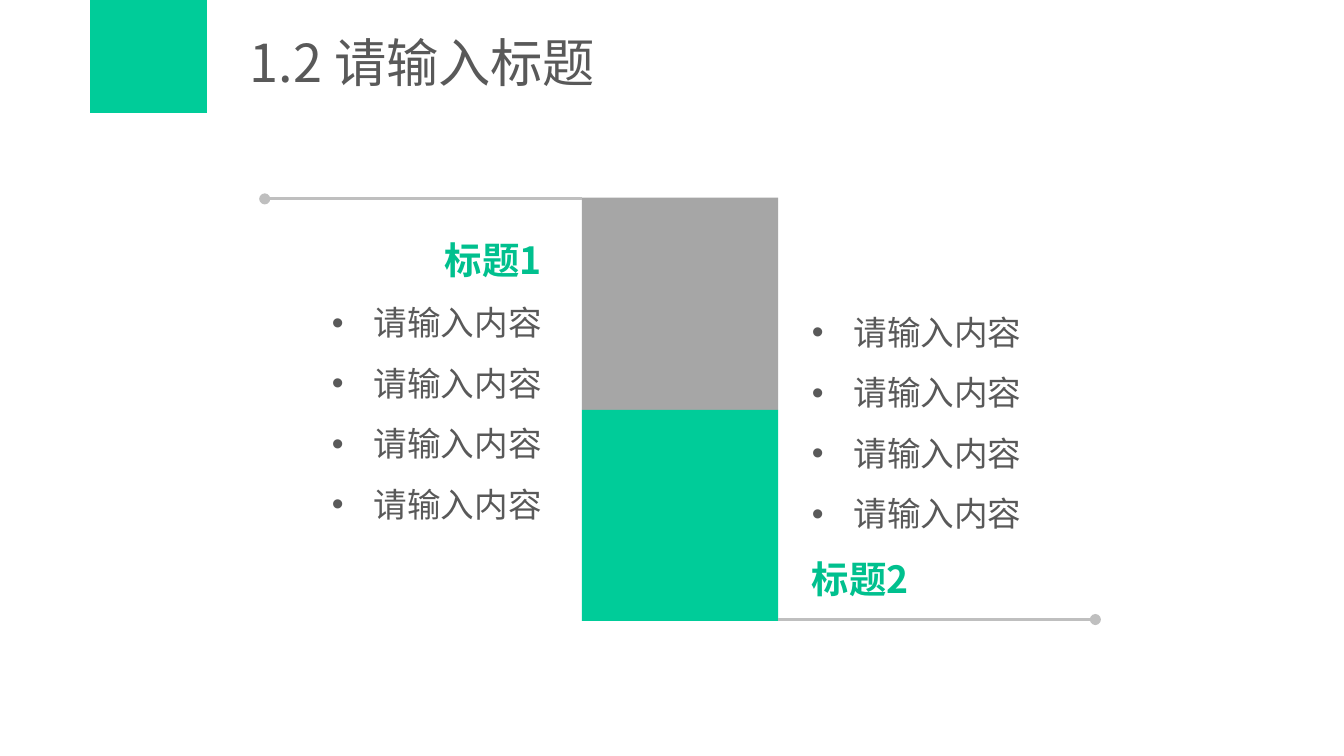
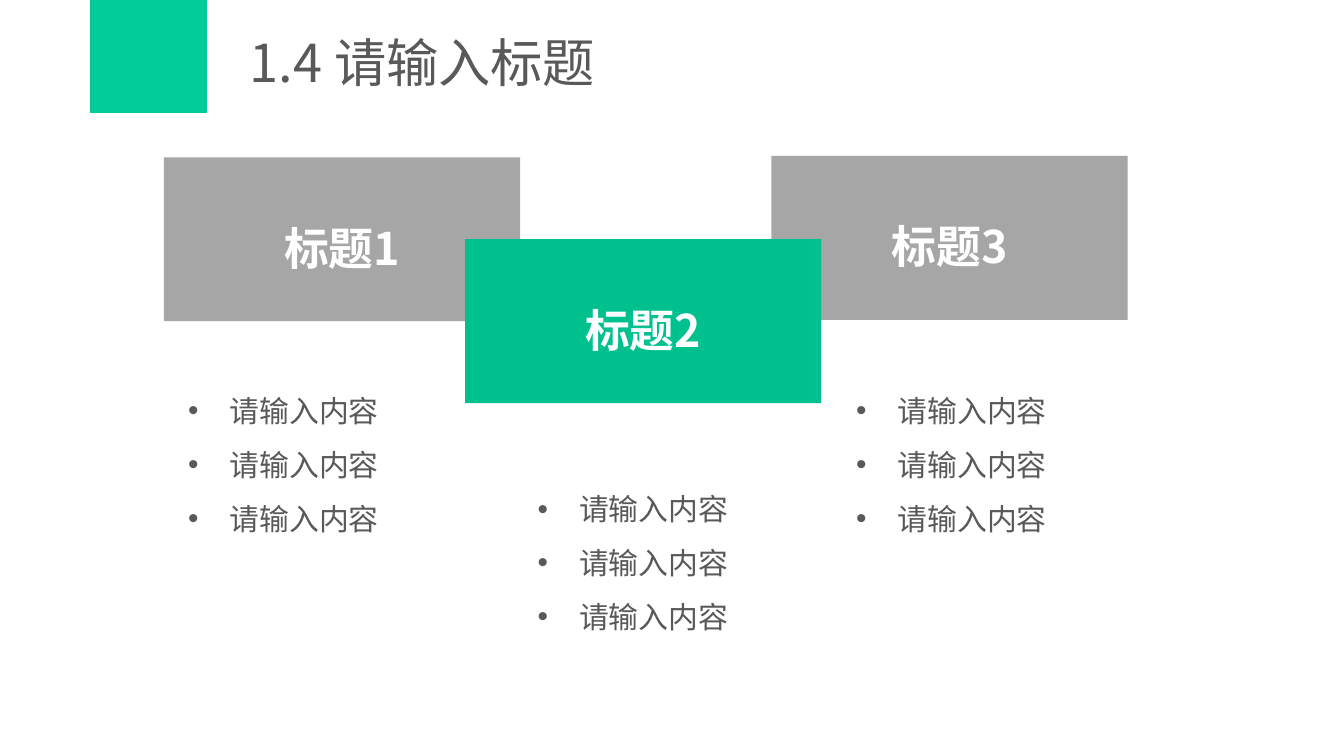
from lxml.etree import SubElement as Sub
from pptx import Presentation
from pptx.dml.color import RGBColor
from pptx.enum.shapes import MSO_CONNECTOR as Link, MSO_SHAPE as Shape
from pptx.enum.text import MSO_ANCHOR as Anchor, MSO_AUTO_SIZE as Fit, PP_ALIGN as Align
from pptx.oxml.ns import qn
from pptx.util import Inches, Pt

GREEN = RGBColor(0x00, 0xCC, 0x99)
DEEP = RGBColor(0x00, 0xC0, 0x8E)
GRAY = RGBColor(0xA6, 0xA6, 0xA6)
PALE = RGBColor(0xBF, 0xBF, 0xBF)
DARK = RGBColor(0x59, 0x59, 0x59)
WHITE = RGBColor(0xFF, 0xFF, 0xFF)
FONT = "Noto Sans CJK SC"
ITEM = "请输入内容"
TWO, FOUR = 3, 4  # layouts with two and four body placeholders


def write(par, text, size=18, color=DARK, bold=False, align=Align.LEFT,
          space=1.0, bullet=False):
    """Fill one paragraph with text in the given format."""
    par.alignment = align
    par.line_spacing = space
    par.space_before = par.space_after = Pt(0)
    run = par.add_run()
    run.text = text
    font = run.font
    font.name, font.size, font.bold = FONT, Pt(size), bold
    font.color.rgb = color
    Sub(font._element, qn("a:ea"), typeface=FONT)
    props = par._p.get_or_add_pPr()
    indent = Inches(0.31) if bullet else 0
    props.set("marL", str(indent))
    props.set("indent", str(-indent))
    if bullet:
        Sub(props, qn("a:buFont"), typeface="Arial")
        Sub(props, qn("a:buChar"), char="•")
    else:
        Sub(props, qn("a:buNone"))


def place(shape, x, y, w, h):
    shape.left, shape.top = Inches(x), Inches(y)
    shape.width, shape.height = Inches(w), Inches(h)


class Deck:
    def __init__(self):
        self.file = Presentation()
        self.file.slide_width = Inches(10)
        self.file.slide_height = Inches(10) * 9 // 16

    def start(self, title, layout):
        """Add a slide with the corner block and its title."""
        self.slide = self.file.slides.add_slide(self.file.slide_layouts[layout])
        self.free = [s for s in self.slide.placeholders
                     if s.placeholder_format.idx > 0]
        self.block(0.67, 0, 0.87, 0.84, GREEN)
        head = self.slide.shapes.title
        place(head, 1.76, 0.14, 7.89, 0.63)
        head.text_frame.vertical_anchor = Anchor.MIDDLE
        write(head.text_frame.paragraphs[0], title, size=28)

    def block(self, x, y, w, h, color, text=None):
        box = self.slide.shapes.add_shape(
            Shape.RECTANGLE, Inches(x), Inches(y), Inches(w), Inches(h))
        box.shadow.inherit = False
        box.fill.solid()
        box.fill.fore_color.rgb = color
        box.line.fill.background()
        if text:
            box.text_frame.vertical_anchor = Anchor.MIDDLE
            write(box.text_frame.paragraphs[0], text, size=24, color=WHITE,
                  bold=True, align=Align.CENTER, space=1.3)

    def line(self, x, y, end):
        """Draw a level line from x to end, closed by a dot."""
        rule = self.slide.shapes.add_connector(
            Link.STRAIGHT, Inches(x), Inches(y), Inches(end), Inches(y))
        rule.line.color.rgb = PALE
        rule.line.width = Pt(1.5)
        Sub(rule.line._get_or_add_ln(), qn("a:tailEnd"), type="oval")
        Sub(rule._element.spPr, qn("a:effectLst"))

    def items(self, x, y, w, h, rows, align=Align.LEFT):
        """Fill the next body placeholder with (text, format) rows."""
        body = self.free.pop(0)
        place(body, x, y, w, h)
        frame = body.text_frame
        frame.word_wrap = True
        frame.auto_size = Fit.SHAPE_TO_FIT_TEXT
        frame.vertical_anchor = Anchor.TOP
        for i, (text, form) in enumerate(rows):
            par = frame.add_paragraph() if i else frame.paragraphs[0]
            write(par, text, align=align, space=1.5, **form)

    def finish(self):
        """Remove the placeholders left empty."""
        for spare in self.free:
            spare._element.getparent().remove(spare._element)


def points(count, size):
    return [(ITEM, {"size": size, "bullet": True})] * count


def label(text):
    return [(text, {"size": 20, "color": DEEP, "bold": True})]


def stack(deck):
    deck.start("1.2 请输入标题", TWO)
    left, width = 4.33, 1.46
    top, mid, low = 1.47, 3.05, 4.62
    right = left + width
    deck.block(left, top, width, mid - top, GRAY)
    deck.block(left, mid, width, low - mid, GREEN)
    reach = 2.36
    deck.line(right, 4.61, right + reach)
    deck.line(left, 1.48, left - reach)
    deck.items(2.06, 1.55, 2.07, 2.88, label("标题1") + points(4, 18), Align.RIGHT)
    deck.items(5.94, 2.12, 2.07, 2.42, points(4, 18) + label("标题2"))
    deck.finish()


def steps(deck):
    deck.start("1.4 请输入标题", FOUR)
    for x, y, color, text in ((1.22, 1.17, GRAY, "标题1"),
                              (5.74, 1.16, GRAY, "标题3"),
                              (3.46, 1.78, DEEP, "标题2")):
        deck.block(x, y, 2.65, 1.22, color, text)
    for x, y in ((1.3, 2.74), (3.9, 3.47), (6.27, 2.74)):
        deck.items(x, y, 2.36, 1.31, points(3, 16))
    deck.finish()


def main():
    deck = Deck()
    stack(deck)
    steps(deck)
    deck.file.save("out.pptx")


if __name__ == "__main__":
    main()
